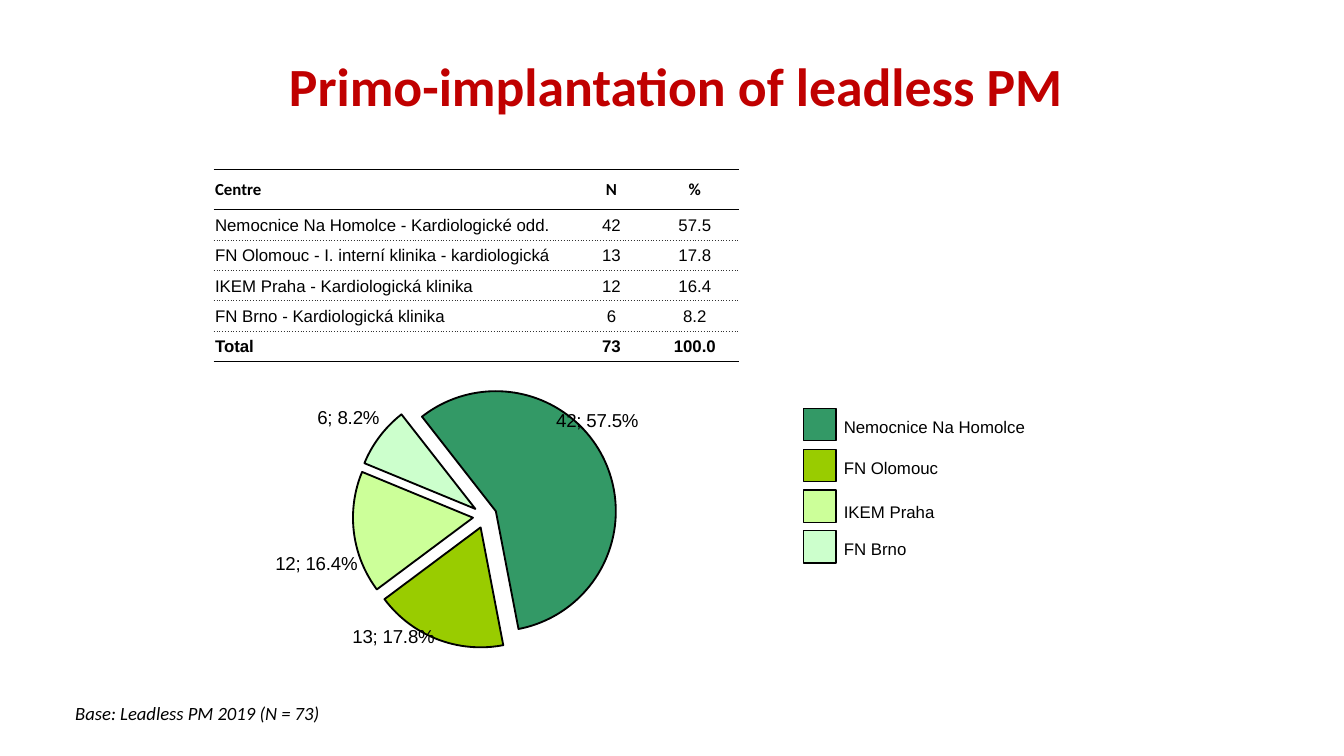
import copy

import lxml.etree
import pptx
import pptx.chart.data
import pptx.dml.color
import pptx.enum.chart
import pptx.enum.shapes
import pptx.enum.text
import pptx.oxml
import pptx.oxml.ns
import pptx.util

Inches = pptx.util.Inches
Pt = pptx.util.Pt
RGBColor = pptx.dml.color.RGBColor
qn = pptx.oxml.ns.qn
ALIGN = pptx.enum.text.PP_ALIGN

BLACK = RGBColor(0x00, 0x00, 0x00)
GREY = RGBColor(0x33, 0x33, 0x33)
RED = RGBColor(0xC0, 0x00, 0x00)
SEA_GREEN = RGBColor(0x33, 0x99, 0x66)
OLIVE = RGBColor(0x99, 0xCC, 0x00)
LIME = RGBColor(0xCC, 0xFF, 0x99)
MINT = RGBColor(0xCC, 0xFF, 0xCC)
SLICE_COLOURS = [SEA_GREEN, OLIVE, LIME, MINT]

NO_GRID_STYLE = "{2D5ABB26-0587-4C30-8999-92F81FD0307C}"
COUNTS = [42, 13, 12, 6]
ROWS = [
    ("Centre", "N", "%"),
    ("Nemocnice Na Homolce - Kardiologické odd.", "42", "57.5"),
    ("FN Olomouc - I. interní klinika - kardiologická", "13", "17.8"),
    ("IKEM Praha - Kardiologická klinika", "12", "16.4"),
    ("FN Brno - Kardiologická klinika", "6", "8.2"),
    ("Total", "73", "100.0"),
]
LEGEND = [
    ("Nemocnice Na Homolce", 1.56, 0.01),
    ("FN Olomouc", 0.91, 0.01),
    ("IKEM Praha", 0.88, 0.04),
    ("FN Brno", 0.71, 0.01),
]
LABEL_SHIFTS = [(-0.1, -0.08), (0, -0.06), (0.02, 0.06), (0.01, -0.01)]


def set_font(font, name, size, colour=BLACK, bold=False, italic=False):
    font.name, font.size = name, Pt(size)
    font.bold, font.italic = bold, italic
    font.color.rgb = colour


def place(shape, left, top, width, height):
    shape.left, shape.top = Inches(left), Inches(top)
    shape.width, shape.height = Inches(width), Inches(height)


def fill_placeholder(box, text, anchor):
    frame = box.text_frame
    frame.text = text
    frame.word_wrap = True
    frame.vertical_anchor = anchor
    frame.margin_left = frame.margin_right = Inches(0.06)
    frame.margin_top = frame.margin_bottom = Inches(0.03)
    para = frame.paragraphs[0]
    para.line_spacing = 0.9
    para.space_before = Pt(0)
    return para


def add_title(page, left, top, width, height):
    box = page.shapes.title
    place(box, left, top, width, height)
    para = fill_placeholder(box, "Primo-implantation of leadless PM",
                            pptx.enum.text.MSO_ANCHOR.MIDDLE)
    para.alignment = ALIGN.CENTER
    set_font(para.font, "Calibri", 28.8, RED, bold=True)


def add_base_note(page, left, top, width, height):
    box = page.placeholders[1]
    place(box, left, top, width, height)
    para = fill_placeholder(box, "Base: Leadless PM 2019 (N = 73)",
                            pptx.enum.text.MSO_ANCHOR.TOP)
    properties = para._p.get_or_add_pPr()
    properties.set("marL", "0")
    properties.set("indent", "0")
    lxml.etree.SubElement(properties, qn("a:buNone"))
    set_font(para.font, "Calibri", 10, italic=True)


def add_border(cell, side, solid):
    width, colour, dash = (1, BLACK, "solid") if solid else (0.5, GREY, "sysDot")
    line = lxml.etree.SubElement(cell._tc.get_or_add_tcPr(), qn(f"a:ln{side}"), w=str(Pt(width)))
    fill = lxml.etree.SubElement(line, qn("a:solidFill"))
    lxml.etree.SubElement(fill, qn("a:srgbClr"), val=str(colour))
    lxml.etree.SubElement(line, qn("a:prstDash"), val=dash)


def add_centre_table(page, left, top, width, height):
    frame = page.shapes.add_table(len(ROWS), 3, Inches(left), Inches(top),
                                  Inches(width), Inches(height))
    table = frame.table
    table.first_row = table.horz_banding = False
    table._tbl.tblPr.find(qn("a:tableStyleId")).text = NO_GRID_STYLE
    for column, share in zip(table.columns, (2.67, 0.58, 0.66)):
        column.width = Inches(share)
    header_height = 0.3
    last = len(ROWS) - 1
    for index, values in enumerate(ROWS):
        header = index == 0
        table.rows[index].height = Inches(
            header_height if header else (height - header_height) / last)
        for position, value in enumerate(values):
            cell = table.cell(index, position)
            cell.text = value
            cell.vertical_anchor = pptx.enum.text.MSO_ANCHOR.MIDDLE
            cell.margin_left = cell.margin_right = Inches(0.01)
            cell.margin_top = Inches(0 if header else 0.01)
            cell.margin_bottom = 0
            add_border(cell, "T", solid=index <= 1)
            add_border(cell, "B", solid=index in (0, last))
            cell.fill.background()
            para = cell.text_frame.paragraphs[0]
            para.alignment = ALIGN.CENTER if position else ALIGN.LEFT
            set_font(para.font, "Calibri" if header else "Arial", 9,
                     bold=index in (0, last))


def add_layout(parent, position, **settings):
    layout = lxml.etree.Element(qn("c:layout"))
    manual = lxml.etree.SubElement(layout, qn("c:manualLayout"))
    for name, value in settings.items():
        lxml.etree.SubElement(manual, qn(f"c:{name}"), val=str(value))
    parent.insert(position, layout)


def add_slice_labels(series):
    labels = series.data_labels
    labels.show_value = labels.show_percentage = True
    labels.number_format = "0.0%"
    labels.number_format_is_linked = False
    labels.position = pptx.enum.chart.XL_LABEL_POSITION.OUTSIDE_END
    set_font(labels.font, "Arial", 10)
    group = labels._element
    for leader in group.findall(qn("c:showLeaderLines")):
        group.remove(leader)
    separator = lxml.etree.Element(qn("c:separator"))
    separator.text = "; "
    group.find(qn("c:showBubbleSize")).addnext(separator)
    shared = list(group)
    for index, (across, down) in enumerate(LABEL_SHIFTS):
        label = pptx.oxml.parse_xml(f'<c:dLbl {pptx.oxml.ns.nsdecls("c")}/>')
        lxml.etree.SubElement(label, qn("c:idx"), val=str(index))
        add_layout(label, 1, x=across, y=down)
        label.extend(copy.deepcopy(shared))
        group.insert(index, label)
    lxml.etree.SubElement(group, qn("c:showLeaderLines"), val="0")


def add_centre_pie(page, left, top, width, height):
    data = pptx.chart.data.CategoryChartData()
    data.categories = ["1", "2", "3", "4"]
    data.add_series("Series 1", COUNTS)
    chart = page.shapes.add_chart(pptx.enum.chart.XL_CHART_TYPE.PIE, Inches(left), Inches(top),
                                  Inches(width), Inches(height), data).chart
    chart.has_legend = chart.has_title = False
    set_font(chart.font, "Arial", 17.2, bold=True)
    plot = chart.plots[0]
    plot.vary_by_categories = True
    series = plot.series[0]
    series.format.line.color.rgb = BLACK
    series.format.line.width = Pt(1)
    for index, colour in enumerate(SLICE_COLOURS):
        look = series.points[index].format
        look.fill.solid()
        look.fill.fore_color.rgb = colour
        look.line.color.rgb = BLACK
        look.line.width = Pt(1)
    explosion = lxml.etree.Element(qn("c:explosion"), val="10")
    series._element.get_or_add_spPr().addnext(explosion)
    add_slice_labels(series)
    for angle in plot._element.findall(qn("c:firstSliceAng")):
        plot._element.remove(angle)
    lxml.etree.SubElement(plot._element, qn("c:firstSliceAng"), val="322")
    area = plot._element.getparent()
    for layout in area.findall(qn("c:layout")):
        area.remove(layout)
    add_layout(area, 0, layoutTarget="inner", xMode="edge", yMode="edge",
               x=0.2, y=0.06, w=0.47, h=0.8)


def add_legend(page, left, top, width, height):
    side = 0.24
    pitch = (height - side) / (len(LEGEND) - 1)
    for index, (name, text_width, drop) in enumerate(LEGEND):
        row_top = top + index * pitch
        swatch = page.shapes.add_shape(pptx.enum.shapes.MSO_SHAPE.RECTANGLE, Inches(left),
                                       Inches(row_top), Inches(side), Inches(side))
        swatch.shadow.inherit = False
        swatch.fill.solid()
        swatch.fill.fore_color.rgb = SLICE_COLOURS[index]
        swatch.line.color.rgb = BLACK
        swatch.line.width = Pt(0.75)
        box = page.shapes.add_textbox(Inches(left + 0.2), Inches(row_top + drop),
                                      Inches(min(text_width, width)), Inches(0.25))
        box.text_frame.word_wrap = False
        para = box.text_frame.paragraphs[0]
        para.text = name
        set_font(para.font, "Arial", 9)


def main():
    deck = pptx.Presentation()
    deck.slide_width = Inches(10)
    deck.slide_height = deck.slide_width * 9 // 16
    page = deck.slides.add_slide(deck.slide_layouts[1])
    add_title(page, 0.5, 0.41, 9.06, 0.5)
    add_base_note(page, 0.5, 5.21, 7, 0.41)
    add_centre_table(page, 1.59, 1.26, 3.91, 1.43)
    add_centre_pie(page, 1.79, 2.71, 4.18, 2.46)
    add_legend(page, 5.98, 3.04, 1.76, 1.15)
    deck.save("out.pptx")


if __name__ == "__main__":
    main()
